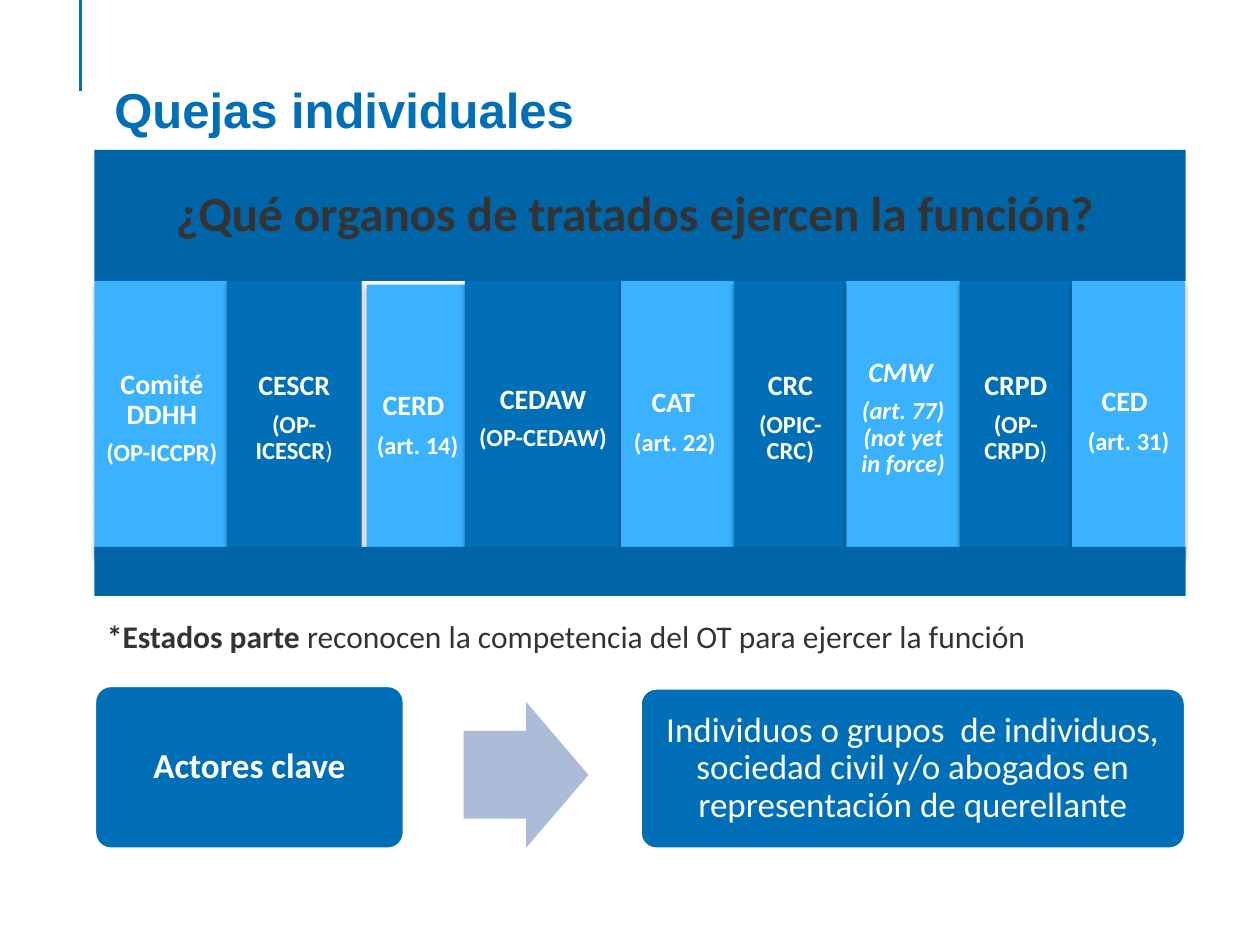
from dataclasses import dataclass

from lxml.etree import SubElement
from pptx import Presentation
from pptx.dml.color import RGBColor as RGB
from pptx.enum.shapes import MSO_CONNECTOR as Line, MSO_SHAPE as Shape
from pptx.enum.text import MSO_ANCHOR as Anchor, PP_ALIGN as Align
from pptx.oxml.ns import qn
from pptx.util import Inches, Pt


@dataclass(frozen=True)
class Theme:
    blue: str = "006FB7"
    dark: str = "0065A6"
    light: str = "3BB2FF"
    pale: str = "ABBBD8"
    ink: str = "333333"
    white: str = "FFFFFF"
    body: str = "Calibri"
    head: str = "Arial"
    title: int = 28
    actor: int = 20
    text: int = 18
    name: int = 16
    note: int = 14


@dataclass(frozen=True)
class Run:
    text: str
    size: int = None
    bold: bool = None


T = Theme()
COLS, ROWS = 100, 75
LEFT, WIDTH = 7.5, 86.6
BODY_TOP, BODY_HEIGHT = 22.3, 21.8
NARROW_LEFT, NARROW_WIDTH = 49.3, 8.95

WIDE_BODIES = [
    (7.5, 10.7, 0, [Run("Comité DDHH")], [Run("(OP-ICCPR)")]),
    (18, 10.7, 0, [Run("CESCR")], [Run("(OP-ICESCR"), Run(")", bold=False)]),
    (29.1, 8.1, 0.3, [Run("CERD"), Run(" ", 21)], [Run("(art. 14) ")]),
    (36.9, 12.4, 0, [Run("CEDAW")], [Run("(OP-CEDAW)")]),
]
NARROW_BODIES = [
    ([Run("CAT"), Run(" ", 21)], [Run("(art. 22) ")], False),
    ([Run("CRC")], [Run("(OPIC-CRC)")], False),
    ([Run("CMW"), Run(" ", 13)], [Run("(art. 77) (not yet in force)")], True),
    ([Run("CRPD")], [Run("(OP-CRPD"), Run(")", bold=False)], False),
    ([Run("CED"), Run(" ", 20)], [Run("(art. 31)")], False),
]


def grid(x, y, w, h):
    cx, cy = Inches(10) / COLS, Inches(7.5) / ROWS
    return round(x * cx), round(y * cy), round(w * cx), round(h * cy)


def add_paragraph(tf, runs, size, color, font=T.body, bold=False,
                  italic=False, first=True):
    p = tf.paragraphs[0] if first else tf.add_paragraph()
    f = p.font
    f.name, f.size, f.bold, f.italic = font, Pt(size), bold, italic
    f.color.rgb = RGB.from_string(color)
    for run in runs:
        r = p.add_run()
        r.text = run.text
        if run.size is not None:
            r.font.size = Pt(run.size)
        if run.bold is not None:
            r.font.bold = run.bold
    return p


def add_centred(tf, runs, size, color, **style):
    p = add_paragraph(tf, runs, size, color, **style)
    p.alignment = Align.CENTER
    p.line_spacing = 0.9
    p.space_after = Pt(round(size * 0.35, 1))


def add_block(slide, kind, box, fill, inset=0.08):
    sp = slide.shapes.add_shape(kind, *grid(*box))
    sp.shadow.inherit = False
    sp.fill.solid()
    sp.fill.fore_color.rgb = RGB.from_string(fill)
    sp.line.fill.background()
    tf = sp.text_frame
    tf.word_wrap = True
    tf.vertical_anchor = Anchor.MIDDLE
    tf.margin_left = tf.margin_right = Inches(inset)
    tf.margin_top = tf.margin_bottom = Inches(inset)
    return sp


def add_shadow(sp):
    effects = sp.element.spPr.find(qn("a:effectLst"))
    shadow = SubElement(effects, qn("a:outerShdw"), blurRad=str(Pt(3.1)),
                        dist=str(Pt(1.8)), dir="5400000", rotWithShape="0")
    color = SubElement(shadow, qn("a:srgbClr"), val="000000")
    SubElement(color, qn("a:alpha"), val="35000")


def add_body(slide, index, x, w, drop, name, note, italic=False):
    fill = T.blue if index % 2 else T.light
    box = (x, BODY_TOP + drop, w, BODY_HEIGHT)
    sp = add_block(slide, Shape.RECTANGLE, box, fill, inset=0.07)
    add_shadow(sp)
    for runs, size in ((name, T.name), (note, T.note)):
        add_centred(sp.text_frame, runs, size, T.white, bold=True,
                    italic=italic, first=runs is name)


def add_bodies(slide):
    for i, (x, w, drop, name, note) in enumerate(WIDE_BODIES):
        add_body(slide, i, x, w, drop, name, note)
    for i, (name, note, italic) in enumerate(NARROW_BODIES):
        add_body(slide, i + len(WIDE_BODIES), NARROW_LEFT + i * NARROW_WIDTH,
                 NARROW_WIDTH, 0, name, note, italic)


def add_actor(slide, box, text, bold=False):
    sp = add_block(slide, Shape.ROUNDED_RECTANGLE, box, T.blue, inset=0.12)
    sp.adjustments[0] = 0.1
    sp.line.color.rgb = RGB.from_string(T.white)
    sp.line.width = Pt(2)
    add_centred(sp.text_frame, [Run(text)], T.actor, T.white, bold=bold)


def add_text(slide, box, runs, size, color, **style):
    tf = slide.shapes.add_textbox(*grid(*box)).text_frame
    tf.word_wrap = True
    add_paragraph(tf, runs, size, color, **style)
    return tf


def add_rule(slide, x, y, length):
    left, top, _, height = grid(x, y, 0, length)
    line = slide.shapes.add_connector(Line.STRAIGHT, left, top, left, top + height)
    line.line.color.rgb = RGB.from_string(T.blue)
    line.line.width = Pt(2)
    SubElement(line.element.spPr, qn("a:effectLst"))


def main():
    prs = Presentation()
    prs.slide_width, prs.slide_height = Inches(10), Inches(7.5)
    slide = prs.slides.add_slide(prs.slide_layouts[6])

    add_rule(slide, 6.4, 0, 7.2)
    title = add_text(slide, (8.1, 5.5, 82.7, 7.7), [Run("Quejas individuales")],
                     T.title, T.blue, font=T.head, bold=True)
    title.margin_top = Inches(0.08)

    add_actor(slide, (LEFT, 54.4, 24.6, 13), "Actores clave", bold=True)
    arrow = add_block(slide, Shape.RIGHT_ARROW, (36.8, 55.7, 9.9, 11.6), T.pale)
    arrow.adjustments[0], arrow.adjustments[1] = 0.6, 0.5
    add_actor(slide, (50.8, 54.6, 43.3, 12.8),
              "Individuos o grupos  de individuos, sociedad civil y/o abogados "
              "en representación de querellante")

    banner = add_block(slide, Shape.RECTANGLE, (LEFT, 11.9, WIDTH, 10.4),
                       T.dark, inset=0.12)
    add_centred(banner.text_frame,
                [Run("¿Qué organos de tratados ejercen la función? ")],
                T.title, T.ink, bold=True)
    add_bodies(slide)
    add_block(slide, Shape.RECTANGLE, (LEFT, 43.4, WIDTH, 3.9), T.dark)

    add_text(slide, (LEFT, 48.5, 88.2, 4),
             [Run("*Estados parte ", bold=True),
              Run("reconocen la competencia del OT para ejercer la función")],
             T.text, T.ink)

    prs.save("out.pptx")


if __name__ == "__main__":
    main()
